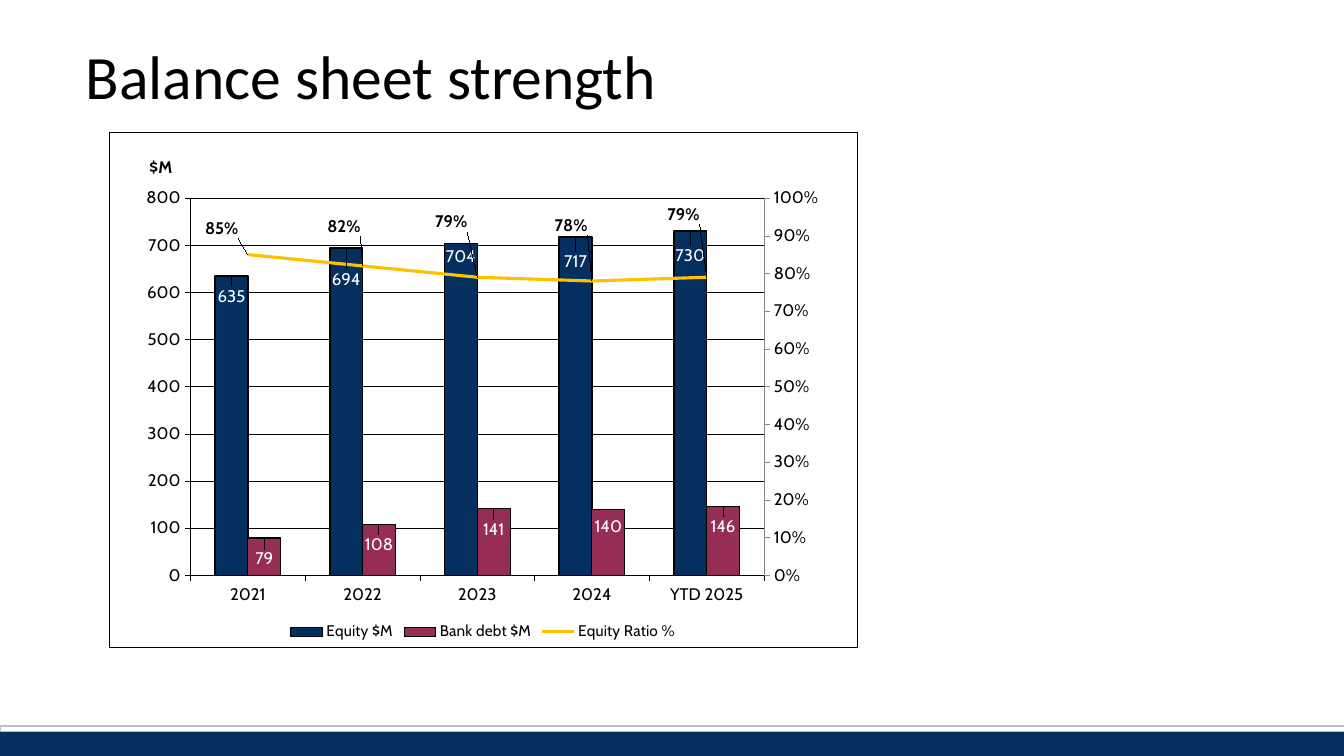
from pptx import Presentation
from pptx.chart.axis import ValueAxis
from pptx.chart.data import CategoryChartData
from pptx.dml.color import RGBColor
from pptx.enum.chart import (XL_CHART_TYPE, XL_LABEL_POSITION, XL_LEGEND_POSITION,
                             XL_MARKER_STYLE, XL_TICK_MARK)
from pptx.enum.shapes import MSO_SHAPE
from pptx.enum.text import MSO_ANCHOR, MSO_AUTO_SIZE, PP_ALIGN
from pptx.oxml import parse_xml
from pptx.oxml.ns import qn
from pptx.util import Inches, Pt

NAVY = RGBColor(0x04, 0x2F, 0x5F)
PLUM = RGBColor(0x95, 0x2D, 0x54)
GOLD = RGBColor(0xFF, 0xC0, 0x00)
BLACK = RGBColor(0, 0, 0)
WHITE = RGBColor(0xFF, 0xFF, 0xFF)
GREY = RGBColor(0x86, 0x86, 0x86)
PALE_GREY = RGBColor(0xBF, 0xBF, 0xBF)

WIDTH, HEIGHT = 13.33, 7.5
NS = ('xmlns:c="http://schemas.openxmlformats.org/drawingml/2006/chart" '
      'xmlns:a="http://schemas.openxmlformats.org/drawingml/2006/main"')

YEARS = ["2021", "2022", "2023", "2024", "YTD 2025"]
# Label shifts are shares of the chart's width and height.
SERIES = [
    dict(name="Equity $M", values=[635, 694, 704, 717, 730], format="General",
         color=NAVY, outline=1, label=dict(size=Pt(12), name="Cabin"), label_color=WHITE,
         place=XL_LABEL_POSITION.INSIDE_END,
         shifts=[(0, 0.014), (0, 0.035), (0, 0), (0, 0.021), (0, 0.021)]),
    dict(name="Bank debt $M", values=[79, 108, 141, 140, 146], format="General",
         color=PLUM, outline=0.75, label=dict(size=Pt(12), name="Cabin"), label_color=WHITE,
         place=XL_LABEL_POSITION.INSIDE_END,
         shifts=[(0, 0.014), (0, 0.012), (0, 0.014), (0, 0.006), (0, 0.012)]),
    dict(name="Equity Ratio %", values=[0.85, 0.82, 0.79, 0.78, 0.79], format="0%",
         color=GOLD, outline=2.25, label=dict(size=Pt(12), name="Cabin", bold=True),
         label_color=BLACK, place=XL_LABEL_POSITION.ABOVE,
         shifts=[(-0.035, -0.023), (-0.025, -0.05), (-0.035, -0.08),
                 (-0.028, -0.08), (-0.031, -0.095)]),
]


def set_all(target, formats):
    for key, value in formats.items():
        setattr(target, key, value)


def style_font(font, color=BLACK, **formats):
    set_all(font, formats)
    font.color.rgb = color


def style_line(line, color, points):
    line.color.rgb = color
    line.width = Pt(points)


def manual_layout(x, y, w=None, h=None, inner=False, edge=True):
    """Layout element in shares of the chart; edge=False means a shift."""
    parts = '<c:layoutTarget val="inner"/>' if inner else ""
    if edge:
        parts += '<c:xMode val="edge"/><c:yMode val="edge"/>'
    sizes = dict(x=x, y=y, w=w, h=h)
    parts += "".join(f'<c:{key} val="{value}"/>' for key, value in sizes.items()
                     if value is not None)
    return parse_xml(f"<c:layout {NS}><c:manualLayout>{parts}</c:manualLayout></c:layout>")


def replace_layout(parent, layout, index):
    for old in parent.findall(qn("c:layout")):
        parent.remove(old)
    parent.insert(index, layout)


def move_ratio_to_right_axis(plot_area):
    """Turn the last series into a line on a second axis, which is returned."""
    bars = plot_area.find(qn("c:barChart"))
    ratio = bars.findall(qn("c:ser"))[-1]
    for flag in ratio.findall(qn("c:invertIfNegative")):
        ratio.remove(flag)
    line = parse_xml(f'<c:lineChart {NS}><c:grouping val="standard"/><c:varyColors val="0"/>'
                     '<c:marker val="1"/><c:axId val="501"/><c:axId val="502"/></c:lineChart>')
    line.insert(2, ratio)
    bars.addnext(line)
    hidden = parse_xml(
        f'<c:catAx {NS}><c:axId val="501"/><c:scaling><c:orientation val="minMax"/></c:scaling>'
        '<c:delete val="1"/><c:axPos val="b"/><c:crossAx val="502"/>'
        '<c:crosses val="autoZero"/></c:catAx>')
    right = parse_xml(
        f'<c:valAx {NS}><c:axId val="502"/><c:scaling><c:orientation val="minMax"/></c:scaling>'
        '<c:delete val="0"/><c:axPos val="r"/><c:numFmt formatCode="0%" sourceLinked="0"/>'
        '<c:majorTickMark val="out"/><c:minorTickMark val="none"/>'
        '<c:tickLblPos val="nextTo"/><c:crossAx val="501"/><c:crosses val="max"/></c:valAx>')
    plot_area.findall(qn("c:valAx"))[-1].addnext(hidden)
    hidden.addnext(right)
    return ValueAxis(right)


def style_axis(axis, line_color=BLACK, **scale):
    set_all(axis, dict(major_tick_mark=XL_TICK_MARK.OUTSIDE,
                       minor_tick_mark=XL_TICK_MARK.NONE, **scale))
    style_line(axis.format.line, line_color, 0.25)
    style_font(axis.tick_labels.font, size=Pt(12), name="Cabin")


def style_series(series, look):
    labels = series.data_labels
    set_all(labels, dict(show_value=True, position=look["place"],
                         number_format=look["format"], number_format_is_linked=False))
    style_font(labels.font, look["label_color"], **look["label"])
    for index, shift in enumerate(look["shifts"]):
        label = series.points[index].data_label
        style_font(label.font, look["label_color"], **look["label"])
        label.position = look["place"]
        labels._element.findall(qn("c:dLbl"))[index].insert(
            1, manual_layout(*shift, edge=False))


def balance_chart(slide, left, top, width, height):
    data = CategoryChartData()
    data.categories = YEARS
    for look in SERIES:
        data.add_series(look["name"], look["values"], look["format"])
    chart = slide.shapes.add_chart(
        XL_CHART_TYPE.COLUMN_CLUSTERED, Inches(left), Inches(top),
        Inches(width), Inches(height), data).chart
    style_font(chart.font, size=Pt(12), name="Arial")
    chart.has_title = False
    set_all(chart.plots[0], dict(gap_width=150, overlap=0, vary_by_categories=False))

    chart_root = chart._chartSpace.find(qn("c:chart"))
    chart_root.addnext(parse_xml(
        f'<c:spPr {NS}><a:solidFill><a:srgbClr val="{WHITE}"/></a:solidFill>'
        f'<a:ln w="{Pt(0.25)}"><a:solidFill><a:srgbClr val="{BLACK}"/></a:solidFill></a:ln>'
        '</c:spPr>'))
    plot_area = chart_root.find(qn("c:plotArea"))
    replace_layout(plot_area, manual_layout(0.109, 0.128, 0.767, 0.733, inner=True), 0)

    amounts = chart.value_axis
    style_axis(chart.category_axis)
    style_axis(amounts, minimum_scale=0, maximum_scale=800, major_unit=100,
               has_major_gridlines=True)
    style_line(amounts.major_gridlines.format.line, BLACK, 0.25)
    unit = amounts.axis_title
    unit.text_frame.text = "$M"
    style_font(unit.text_frame.paragraphs[0].runs[0].font,
               size=Pt(12), name="Cabin", bold=True)
    unit.text_frame._txBody.bodyPr.set("rot", "0")
    replace_layout(unit._element, manual_layout(0.05, 0.04), 1)
    style_axis(move_ratio_to_right_axis(plot_area), GREY,
               minimum_scale=0, maximum_scale=1, major_unit=0.1)

    bars, line = chart.plots
    for series, look in zip([*bars.series, *line.series], SERIES):
        style_series(series, look)
    for series, look in zip(bars.series, SERIES):
        series.format.fill.solid()
        series.format.fill.fore_color.rgb = look["color"]
        style_line(series.format.line, BLACK, look["outline"])
    ratio = line.series[0]
    ratio.smooth = False
    ratio.marker.style = XL_MARKER_STYLE.NONE
    style_line(ratio.format.line, GOLD, SERIES[-1]["outline"])

    chart.has_legend = True
    set_all(chart.legend, dict(position=XL_LEGEND_POSITION.BOTTOM, include_in_layout=False))
    style_font(chart.legend.font, size=Pt(11), name="Cabin")
    replace_layout(chart.legend._element, manual_layout(0.235, 0.95, 0.53, 0.05), 1)


def heading(slide, left, top, width, height):
    title = slide.shapes.title
    set_all(title, dict(left=Inches(left), top=Inches(top),
                        width=Inches(width), height=Inches(height)))
    frame = title.text_frame
    frame.text = "Balance sheet strength"
    set_all(frame, dict(vertical_anchor=MSO_ANCHOR.BOTTOM, word_wrap=True,
                        auto_size=MSO_AUTO_SIZE.NONE))
    set_all(frame.paragraphs[0], dict(alignment=PP_ALIGN.LEFT, line_spacing=0.9))
    style_font(frame.paragraphs[0].runs[0].font, size=Pt(44), name="Calibri")


def footer_band(slide, top, height):
    for share, fill, edge in ((1, NAVY, None), (1 / 6, WHITE, PALE_GREY)):
        band = slide.shapes.add_shape(MSO_SHAPE.RECTANGLE, 0, Inches(top),
                                      Inches(WIDTH), Inches(height * share))
        band.shadow.inherit = False
        band.fill.solid()
        band.fill.fore_color.rgb = fill
        if edge is None:
            band.line.fill.background()
        else:
            style_line(band.line, edge, 0.25)


def main():
    deck = Presentation()
    deck.slide_width, deck.slide_height = Inches(WIDTH), Inches(HEIGHT)
    slide = deck.slides.add_slide(deck.slide_layouts[5])
    footer_band(slide, 0.96 * HEIGHT, 0.04 * HEIGHT)
    heading(slide, 0.75, 0.51, 11.83, 0.66)
    balance_chart(slide, 1.08, 1.31, 7.42, 5.11)
    deck.save("out.pptx")


if __name__ == "__main__":
    main()
